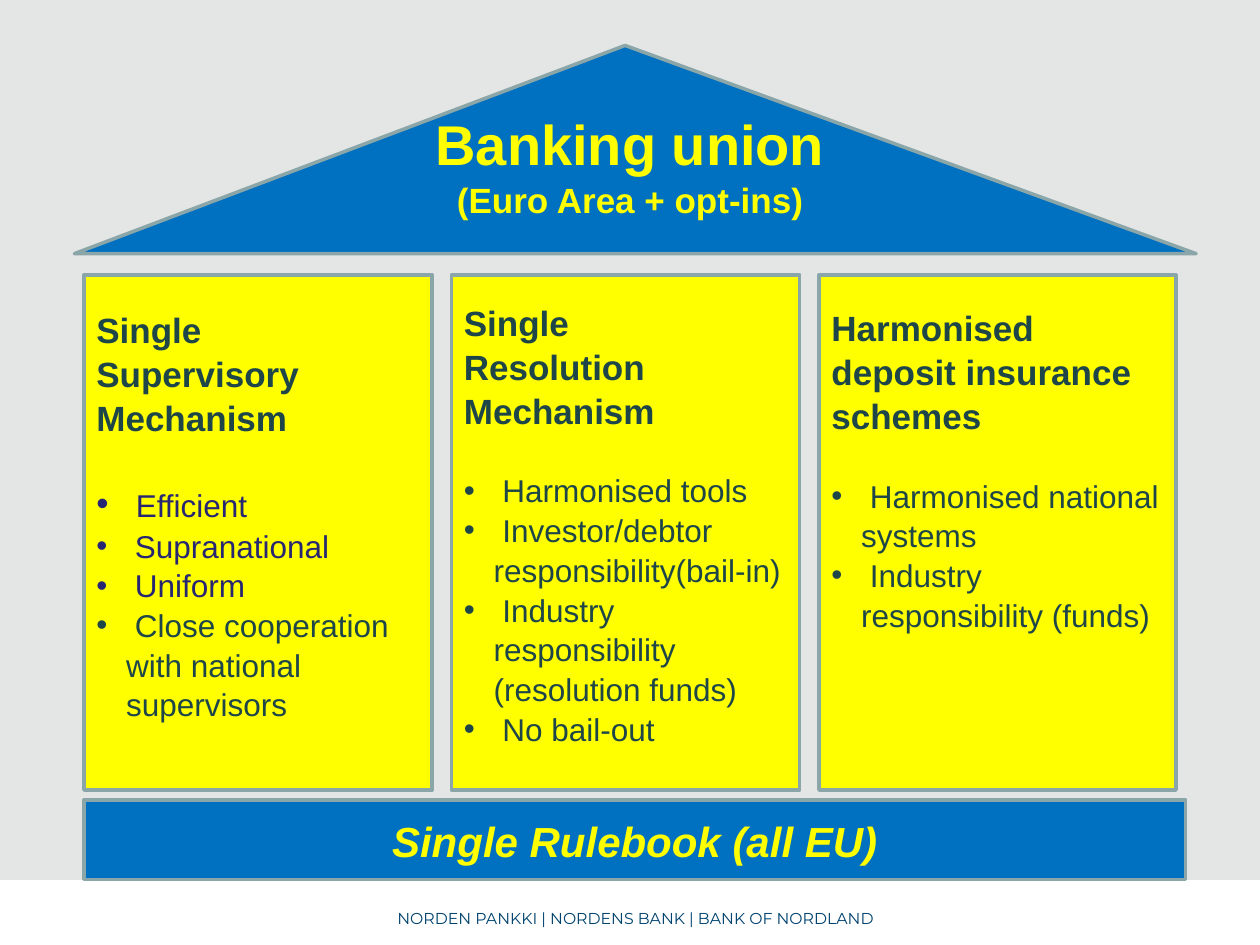
from lxml import etree
from pptx import Presentation
from pptx.dml.color import RGBColor
from pptx.enum import shapes, text
from pptx.oxml import ns
from pptx.util import Pt

GREY = RGBColor(0xE4, 0xE5, 0xE5)
BLUE = RGBColor(0x00, 0x70, 0xC0)
YELLOW = RGBColor(0xFF, 0xFF, 0x00)
EDGE = RGBColor(0x8A, 0xA6, 0xA8)
TEAL = RGBColor(0x1E, 0x46, 0x49)
NAVY = RGBColor(0x26, 0x26, 0x73)
FOOTER_BLUE = RGBColor(0x00, 0x43, 0x6F)

ROOF = [("Banking union", 32), ("(Euro Area + opt-ins)", 20)]
BASE = "Single Rulebook (all EU)"
FOOTER = "NORDEN PANKKI | NORDENS BANK | BANK OF NORDLAND"
# Each pillar: width, top inset, gap and lead size of the list, heading, bullets
PILLARS = [
    (199, 18, 24, 20, ["Single", "Supervisory", "Mechanism"],
     [("Efficient", NAVY), ("Supranational", NAVY), ("Uniform", NAVY),
      ("Close cooperation with national supervisors", TEAL)]),
    (199, 14, 21.7, 18, ["Single", "Resolution", "Mechanism"],
     [("Harmonised tools", TEAL), ("Investor/debtor responsibility(bail-in)", TEAL),
      ("Industry responsibility (resolution funds)", TEAL), ("No bail-out", TEAL)]),
    (204, 17, 21.7, 18, ["Harmonised", "deposit insurance schemes"],
     [("Harmonised national systems", TEAL),
      ("Industry responsibility (funds)", TEAL)]),
]
PILLAR_LEFT, PILLAR_TOP, PILLAR_STEP, PILLAR_HEIGHT = 48, 157, 210, 294.5
HANGING = 17


def add_block(kind, left, top, width, height, fill, edge=EDGE, weight=2):
    block = page.shapes.add_shape(kind, Pt(left), Pt(top), Pt(width), Pt(height))
    block.shadow.inherit = False
    block.fill.solid()
    block.fill.fore_color.rgb = fill
    block.line.color.rgb = edge
    block.line.width = Pt(weight)
    block.text_frame.word_wrap = True
    return block


def add_para(frame, align=text.PP_ALIGN.LEFT, spacing=1.05):
    first = frame.paragraphs[0]
    para = frame.add_paragraph() if first.runs else first
    para.alignment = align
    para.line_spacing = spacing
    return para


def add_span(para, words, size, color, bold=False, italic=False, name="Arial"):
    span = para.add_run()
    span.text = words
    font = span.font
    font.name, font.size, font.bold, font.italic = name, Pt(size), bold, italic
    font.color.rgb = color


def add_bullet(para):
    props = para._p.get_or_add_pPr()
    props.set("marL", str(Pt(HANGING)))
    props.set("indent", str(-Pt(HANGING)))
    etree.SubElement(props, ns.qn("a:buFont")).set("typeface", "Arial")
    etree.SubElement(props, ns.qn("a:buChar")).set("char", "•")


deck = Presentation()
deck.slide_width, deck.slide_height = Pt(720), Pt(540)
page = deck.slides.add_slide(deck.slide_layouts[6])
RECT = shapes.MSO_SHAPE.RECTANGLE
CENTER = text.PP_ALIGN.CENTER

# Backdrop and footer
add_block(RECT, 0, 0, 720, 502.5, GREY, GREY, 0.75)
footer = page.shapes.add_textbox(Pt(42), Pt(515.5), Pt(642), Pt(18))
footer.text_frame.word_wrap = True
add_span(add_para(footer.text_frame, CENTER, 1), FOOTER, 9, FOOTER_BLUE,
         name="Montserrat")

# Roof, with its text raised by the bottom margin
roof = add_block(shapes.MSO_SHAPE.ISOSCELES_TRIANGLE, 42.5, 26, 641, 119, BLUE)
roof.adjustments[0] = 0.491
roof.text_frame.vertical_anchor = text.MSO_ANCHOR.MIDDLE
roof.text_frame.margin_bottom = Pt(47)
for words, size in ROOF:
    add_span(add_para(roof.text_frame, CENTER), words, size, YELLOW, bold=True)

# Pillars
for index, (width, inset, gap, lead, heading, bullets) in enumerate(PILLARS):
    pillar = add_block(RECT, PILLAR_LEFT + index * PILLAR_STEP, PILLAR_TOP,
                       width, PILLAR_HEIGHT, YELLOW)
    frame = pillar.text_frame
    frame.vertical_anchor = text.MSO_ANCHOR.TOP
    frame.margin_top = Pt(inset)
    for words in heading:
        add_span(add_para(frame), words, 20, TEAL, bold=True)
    for number, (words, color) in enumerate(bullets):
        para = add_para(frame)
        if number == 0:
            para.space_before = Pt(gap)
        add_bullet(para)
        add_span(para, " ", 18 if number else lead, color)
        add_span(para, words, 18, color)

# Base
base = add_block(RECT, PILLAR_LEFT, 457, 629.5, 45.5, BLUE)
base.text_frame.vertical_anchor = text.MSO_ANCHOR.MIDDLE
add_span(add_para(base.text_frame, CENTER), BASE, 24, YELLOW, bold=True, italic=True)

deck.save("out.pptx")
